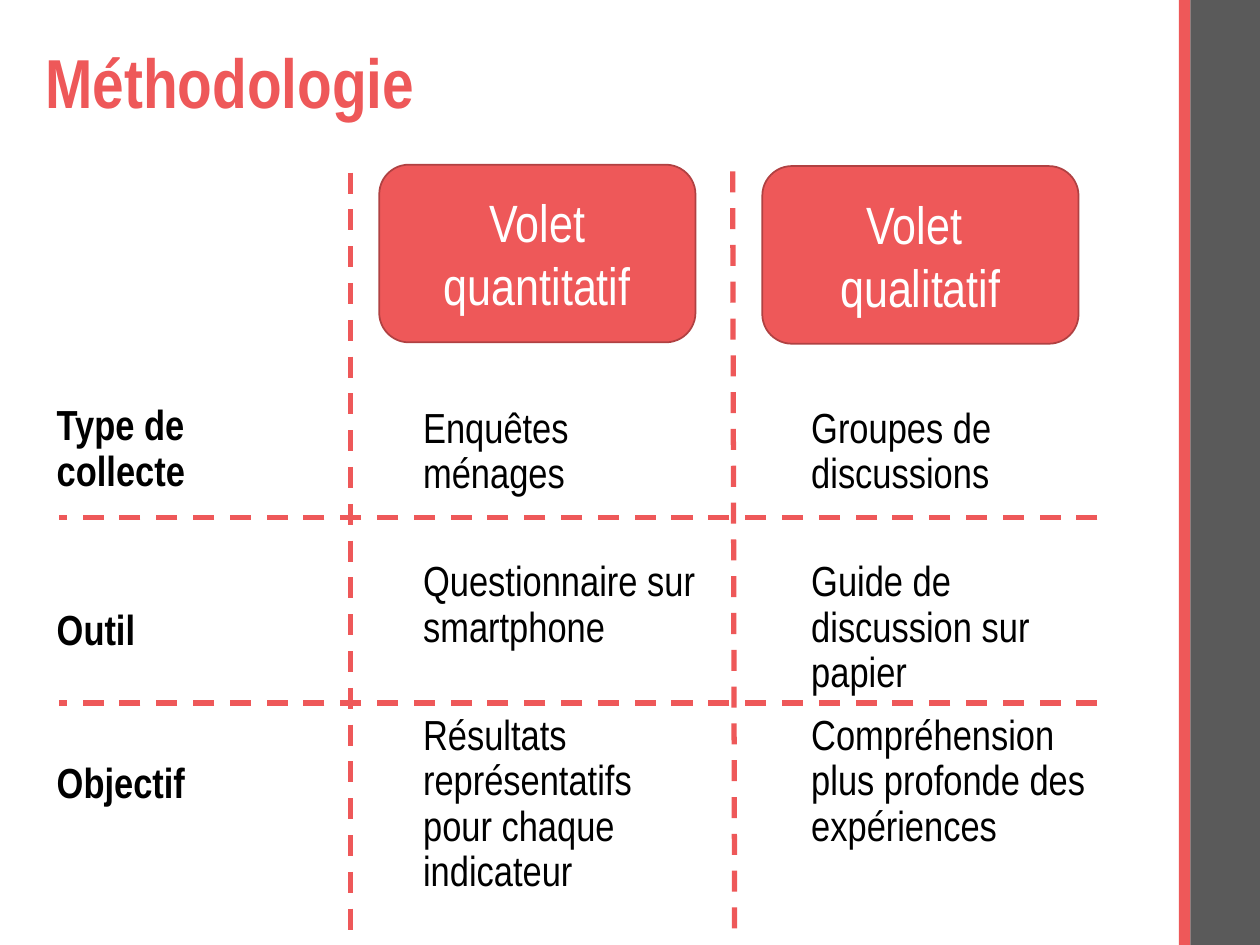
from dataclasses import dataclass

import pptx
import pptx.dml.color
import pptx.enum.dml
import pptx.enum.shapes
import pptx.enum.text
import pptx.oxml.xmlchemy
import pptx.util
from lxml import etree
from pptx.oxml import ns

Pt = pptx.util.Pt
SHAPES = pptx.enum.shapes.MSO_SHAPE
ALIGN = pptx.enum.text.PP_ALIGN
ANCHOR = pptx.enum.text.MSO_ANCHOR

FONT = "Arial Narrow"
COLORS = {
    "coral": "EE5859",
    "coral_edge": "B04142",
    "grey": "5A5A5A",
    "black": "000000",
    "white": "FFFFFF",
}


@dataclass
class Frame:
    left: float
    top: float
    width: float
    height: float

    def lengths(self) -> list:
        return [Pt(v) for v in (self.left, self.top, self.width, self.height)]


@dataclass
class Entry:
    text: str
    space_before: float = 0


@dataclass
class Strand:
    """One component of the study: its heading box and its column of answers."""
    heading: str
    heading_frame: Frame
    answers_frame: Frame
    answers: list[Entry]


@dataclass
class Divider:
    x1: float
    y1: float
    x2: float
    y2: float


TITLE_FRAME = Frame(18.7, 28.8, 625.7, 40.3)
CRITERIA_FRAME = Frame(25.2, 227.5, 162, 263.5)
CRITERIA = [Entry("Type de collecte"), Entry("Outil", 65), Entry("Objectif", 61.5)]

STRANDS = [
    Strand("Volet quantitatif", Frame(216.7, 94.1, 180.7, 101.5),
           Frame(234.7, 229, 175.7, 357.8),
           [Entry("Enquêtes ménages"),
            Entry("Questionnaire sur smartphone", 36),
            Entry("Résultats représentatifs pour chaque indicateur", 36)]),
    Strand("Volet \vqualitatif", Frame(435.6, 94.9, 180.7, 101.5),
           Frame(456.5, 229, 175.7, 311),
           [Entry("Groupes de discussions"),
            Entry("Guide de discussion sur papier", 36),
            Entry("Compréhension plus profonde des expériences", 10)]),
]

DIVIDERS = [
    Divider(200.2, 98.6, 200.2, 533.5),
    Divider(418.7, 97.9, 419.8, 533.5),
    Divider(627.1, 295.9, 33.8, 295.9),
    Divider(627.1, 401.8, 33.8, 401.8),
]

SIDEBAR = [("coral", Frame(673.6, 0, 6.6, 540)), ("grey", Frame(680.2, 0, 39.8, 540))]


def rgb(name: str):
    return pptx.dml.color.RGBColor.from_string(COLORS[name])


def place(shape, frame: Frame) -> None:
    shape.left, shape.top, shape.width, shape.height = frame.lengths()


def style_runs(paragraph, size: float, color: str, bold: bool = False) -> None:
    for run in paragraph.runs:
        run.font.name = FONT
        run.font.size = Pt(size)
        run.font.bold = bold
        run.font.color.rgb = rgb(color)


def write_entries(shape, entries: list[Entry], bold: bool = False) -> None:
    """Fill a column with unbulleted entries, one paragraph each."""
    text_frame = shape.text_frame
    text_frame.word_wrap = True
    text_frame.auto_size = pptx.enum.text.MSO_AUTO_SIZE.NONE
    text_frame.text = "\n".join(entry.text for entry in entries)
    for paragraph, entry in zip(text_frame.paragraphs, entries):
        paragraph.alignment = ALIGN.LEFT
        paragraph.line_spacing = 0.9
        paragraph.space_before = Pt(entry.space_before)
        properties = paragraph._p.get_or_add_pPr()
        properties.set("marL", "0")
        properties.set("indent", "0")
        etree.SubElement(properties, ns.qn("a:buNone"))
        style_runs(paragraph, 24, "black", bold)


def write_title(title) -> None:
    place(title, TITLE_FRAME)
    text_frame = title.text_frame
    text_frame.text = "Méthodologie"
    text_frame.auto_size = pptx.enum.text.MSO_AUTO_SIZE.NONE
    text_frame.vertical_anchor = ANCHOR.MIDDLE
    paragraph = text_frame.paragraphs[0]
    paragraph.alignment = ALIGN.LEFT
    paragraph.line_spacing = 0.9
    style_runs(paragraph, 39.6, "coral", bold=True)


def add_block(slide, kind, frame: Frame, fill: str):
    block = slide.shapes.add_shape(kind, *frame.lengths())
    block.shadow.inherit = False
    block.fill.solid()
    block.fill.fore_color.rgb = rgb(fill)
    block.line.fill.background()
    return block


def add_strand(slide, strand: Strand) -> None:
    heading = add_block(slide, SHAPES.ROUNDED_RECTANGLE, strand.heading_frame, "coral")
    heading.line.color.rgb = rgb("coral_edge")
    heading.line.width = Pt(1)
    heading.text_frame.word_wrap = True
    heading.text_frame.vertical_anchor = ANCHOR.MIDDLE
    paragraph = heading.text_frame.paragraphs[0]
    paragraph.text = strand.heading
    paragraph.alignment = ALIGN.CENTER
    style_runs(paragraph, 30, "white")

    answers = slide.shapes.add_textbox(*strand.answers_frame.lengths())
    write_entries(answers, strand.answers)


def add_divider(slide, divider: Divider) -> None:
    line = slide.shapes.add_connector(
        pptx.enum.shapes.MSO_CONNECTOR.STRAIGHT,
        Pt(divider.x1), Pt(divider.y1), Pt(divider.x2), Pt(divider.y2))
    line.line.color.rgb = rgb("coral")
    line.line.width = Pt(3)
    line.line.dash_style = pptx.enum.dml.MSO_LINE.DASH
    etree.SubElement(line._element.spPr, ns.qn("a:effectLst"))


def main() -> None:
    presentation = pptx.Presentation()
    presentation.slide_width, presentation.slide_height = Pt(720), Pt(540)
    slide = presentation.slides.add_slide(presentation.slide_layouts[1])

    for color, frame in SIDEBAR:
        add_block(slide, SHAPES.RECTANGLE, frame, color)
    write_title(slide.shapes.title)
    criteria = slide.placeholders[1]
    place(criteria, CRITERIA_FRAME)
    write_entries(criteria, CRITERIA, bold=True)
    for strand in STRANDS:
        add_strand(slide, strand)
    for divider in DIVIDERS:
        add_divider(slide, divider)

    presentation.save("out.pptx")


if __name__ == "__main__":
    main()
